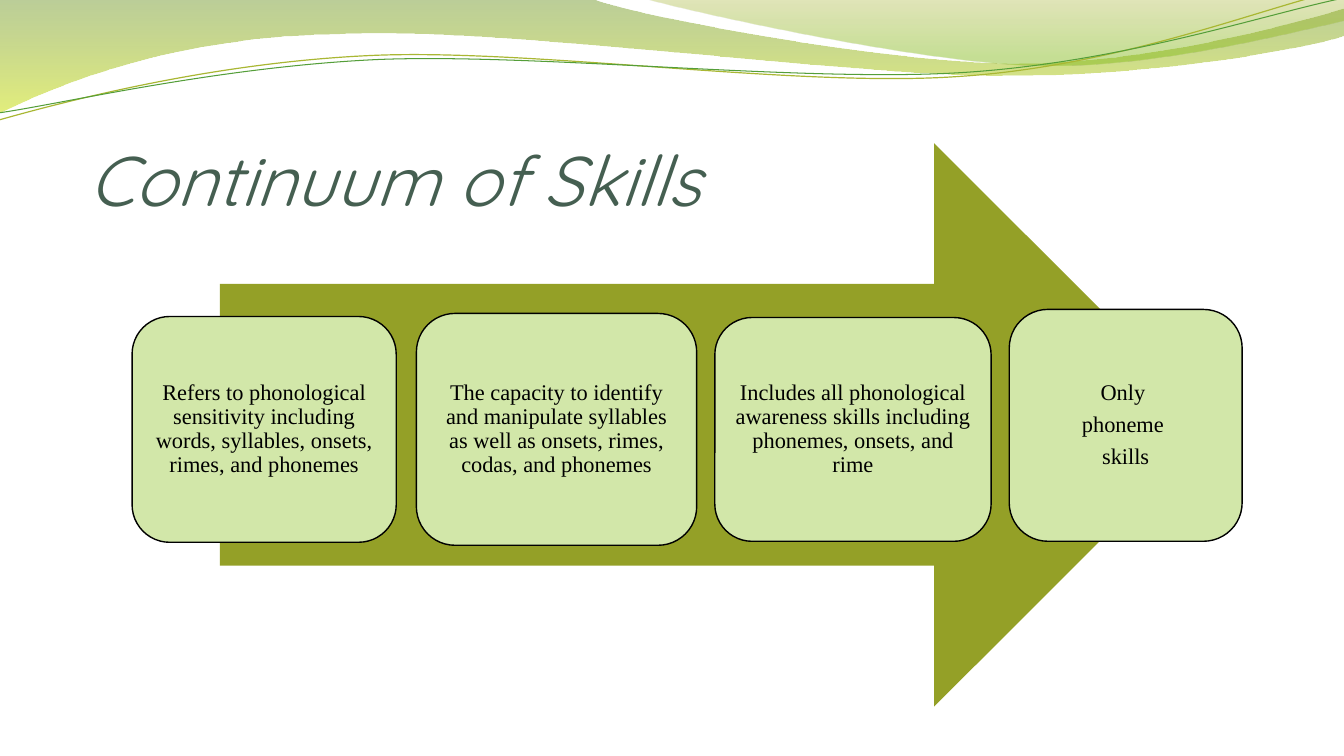
from collections import namedtuple
from dataclasses import dataclass

from lxml.etree import SubElement
from pptx import Presentation
from pptx.dml.color import RGBColor as Rgb
from pptx.enum.shapes import MSO_SHAPE as Shape
from pptx.enum.text import MSO_ANCHOR as Anchor, MSO_AUTO_SIZE as Fit, PP_ALIGN as Align
from pptx.oxml.ns import qn
from pptx.util import Inches, Pt

Box = namedtuple("Box", "left top width height")


@dataclass(frozen=True)
class Theme:
    title: str = "455F51"
    arrow: str = "94A027"
    card: str = "D2E7A9"
    ink: str = "000000"
    head: str = "Quicksand"
    body: str = "Times New Roman"
    big: float = 50
    small: float = 16


THEME = Theme()

WAVES = [
    ([(0, 0), (5.87, -0.01),
      (6.34, 0.17, 8.84, 0.63, 10.11, 0.63), (11.37, 0.63, 12.77, 0.26, 13.33, 0.09),
      (13.34, 0.36),
      (13.11, 0.44, 11.59, 0.76, 9.94, 0.75), (8.29, 0.75, 5.09, 0.28, 3.43, 0.34),
      (1.72, 0.36, 0.61, 0.83, -0.02, 1.13)],
     [(0, "69921C", 45), (1, "CCE10F", 55)]),
    ([(6.38, -0.01),
      (6.79, 0.11, 9.09, 0.62, 10.25, 0.65), (11.4, 0.69, 12.82, 0.32, 13.33, 0.21),
      (13.33, 0)],
     [(0, "9BAA1A", 30), (0.8, "81BA16", 45)]),
]

CURVES = [
    ([(-0.01, 1.19), (0.63, 1.01, 2.1, 0.62, 3.69, 0.55),
      (5.27, 0.48, 7.89, 0.87, 9.49, 0.76), (11.1, 0.66, 12.51, 0.08, 13.3, -0.1)],
     "A9B733", 0.85),
    ([(-0.01, 1.12), (0.62, 1.03, 2.18, 0.66, 3.77, 0.59),
      (5.37, 0.53, 7.96, 0.82, 9.55, 0.72), (11.14, 0.62, 12.55, 0.14, 13.33, -0.02)],
     "549E39", 0.75),
]

CARDS = [
    (Box(0, 1.72, 2.62, 2.24),
     "Refers to phonological sensitivity including words, syllables, onsets, rimes, and phonemes"),
    (Box(2.82, 1.69, 2.78, 2.3),
     "The capacity to identify and manipulate syllables as well as onsets, rimes, codas, and phonemes"),
    (Box(5.78, 1.73, 2.74, 2.22),
     "Includes all phonological awareness skills including phonemes, onsets, and rime"),
    (Box(8.7, 1.65, 2.31, 2.3), "Only \nphoneme \nskills"),
]


def bend(shape, path):
    legs = iter(list(shape.element.spPr.iter(qn("a:lnTo"))))
    for part in path[1:]:
        first = next(legs)
        if len(part) == 6:
            first.tag = qn("a:cubicBezTo")
            for leg in (next(legs), next(legs)):
                first.append(leg[0])
                leg.getparent().remove(leg)


def draw(slide, box, path, close):
    points = [(Inches(box.left + x), Inches(box.top + y))
              for part in path for x, y in zip(part[::2], part[1::2])]
    pen = slide.shapes.build_freeform(*points[0], scale=1.0)
    pen.add_line_segments(points[1:], close=close)
    shape = pen.convert_to_shape()
    shape.shadow.inherit = False
    bend(shape, path)
    return shape


def add_waves(slide, box):
    for path, stops in WAVES:
        wave = draw(slide, box, path, True)
        wave.line.fill.background()
        wave.fill.gradient()
        wave.fill.gradient_angle = 270
        for stop, (place, color, _) in zip(wave.fill.gradient_stops, stops):
            stop.position = place
            stop.color.rgb = Rgb.from_string(color)
        tints = wave.element.spPr.iter(qn("a:srgbClr"))
        for tint, (_, _, alpha) in zip(list(tints), stops):
            SubElement(tint, qn("a:alpha")).set("val", str(alpha * 1000))
    for path, color, width in CURVES:
        curve = draw(slide, box, path, False)
        curve.fill.background()
        curve.line.color.rgb = Rgb.from_string(color)
        curve.line.width = Pt(width)


def style(font, face, size, color):
    font.name = face
    font.size = Pt(size)
    font.color.rgb = Rgb.from_string(color)


def add_title(slide, box, text):
    title = slide.shapes.title
    title.left, title.top, title.width, title.height = map(Inches, box)
    frame = title.text_frame
    frame.text = text
    frame.auto_size = Fit.NONE
    frame.vertical_anchor = Anchor.BOTTOM
    frame.margin_left = frame.margin_right = frame.margin_bottom = 0
    frame.margin_top = Inches(0.05)
    line = frame.paragraphs[0]
    line.alignment = Align.LEFT
    font = line.runs[0].font
    style(font, THEME.head, THEME.big, THEME.title)
    font.italic = True


def add_block(slide, kind, box, color):
    block = slide.shapes.add_shape(kind, *map(Inches, box))
    block.shadow.inherit = False
    block.fill.solid()
    block.fill.fore_color.rgb = Rgb.from_string(color)
    block.line.fill.background()
    return block


def add_card(slide, box, text):
    card = add_block(slide, Shape.ROUNDED_RECTANGLE, box, THEME.card)
    card.line.color.rgb = Rgb.from_string(THEME.ink)
    card.line.width = Pt(1)
    frame = card.text_frame
    frame.text = text
    frame.word_wrap = True
    frame.vertical_anchor = Anchor.MIDDLE
    frame.margin_left = frame.margin_right = Inches(0.07)
    frame.margin_top = frame.margin_bottom = Inches(0.07)
    for line in frame.paragraphs:
        line.alignment = Align.CENTER
        line.line_spacing = 0.9
        line.space_after = Pt(0.35 * THEME.small)
        style(line.runs[0].font, THEME.body, THEME.small, THEME.ink)


def add_flow(slide, box):
    inset = 0.87
    arrow = Box(box.left + inset, box.top, 9.88, box.height)
    add_block(slide, Shape.RIGHT_ARROW, arrow, THEME.arrow)
    for spot, text in reversed(CARDS):
        place = spot._replace(left=box.left + spot.left, top=box.top + spot.top)
        add_card(slide, place, text)


def main():
    deck = Presentation()
    deck.slide_width, deck.slide_height = Inches(13.33), Inches(7.5)
    slide = deck.slides.add_slide(deck.slide_layouts[5])
    add_waves(slide, Box(0, 0, 13.33, 1.2))
    add_title(slide, Box(0.88, 0.77, 11.79, 1.42), "Continuum of Skills")
    add_flow(slide, Box(1.31, 1.42, 11.01, 5.59))
    deck.save("out.pptx")


if __name__ == "__main__":
    main()
